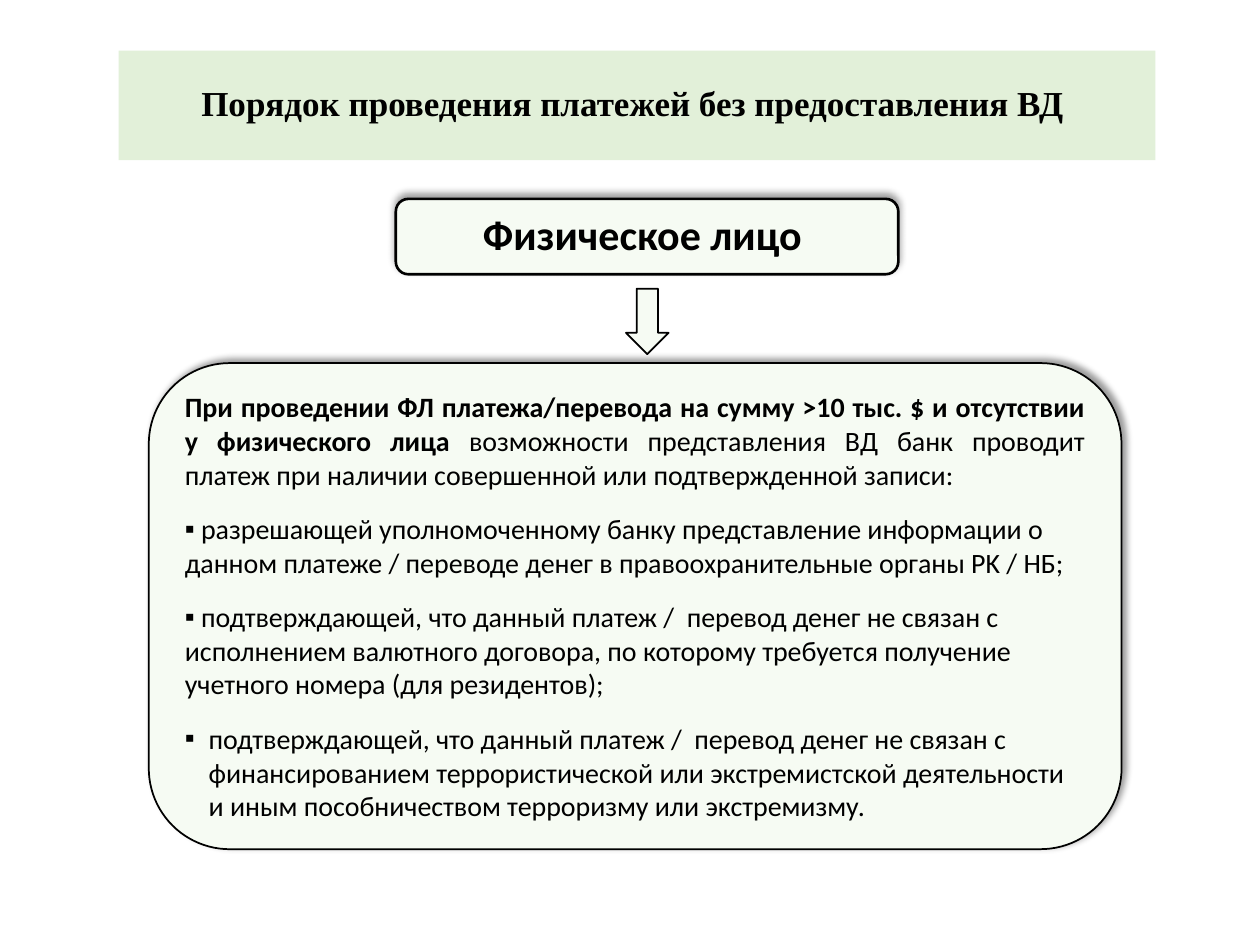
from lxml.etree import SubElement
from pptx import Presentation
from pptx.dml.color import RGBColor
from pptx.enum.shapes import MSO_SHAPE
from pptx.enum.text import MSO_ANCHOR, MSO_AUTO_SIZE, PP_ALIGN
from pptx.oxml.ns import qn
from pptx.util import Cm, Pt

BULLETS = [
    (" разрешающей уполномоченному банку представление информации о данном платеже / "
     "переводе денег в правоохранительные органы РK / НБ;", 0),
    (" подтверждающей, что данный платеж /  перевод денег не связан с исполнением "
     "валютного договора, по которому требуется получение учетного номера (для резидентов);", 0),
    ("подтверждающей, что данный платеж /  перевод денег не связан с финансированием "
     "террористической или экстремистской деятельности и иным пособничеством терроризму "
     "или экстремизму.", 0.48),
]


def color(value):
    return RGBColor.from_string(value)


def add_span(para, text, size=16, font="Calibri", bold=False, ink="000000"):
    span = para.add_run()
    span.text = text
    span.font.size = Pt(size)
    span.font.name = font
    span.font.bold = bold
    span.font.color.rgb = color(ink)


class SlideBuilder:
    band = "E2F0D9"
    panel = "F6FBF3"
    outline = "000000"

    def __init__(self, deck):
        self.page = deck.slides.add_slide(deck.slide_layouts[5])

    def title(self, text, left, top, width, height):
        box = self.page.shapes.title
        box.left, box.top, box.width, box.height = map(Cm, (left, top, width, height))
        box.fill.solid()
        box.fill.fore_color.rgb = color(self.band)
        frame = box.text_frame
        frame.auto_size = MSO_AUTO_SIZE.NONE
        frame.margin_left = frame.margin_right = frame.margin_top = frame.margin_bottom = 0
        self.heading(box, text, size=20, font="Times New Roman")

    def heading(self, box, text, **style):
        frame = box.text_frame
        frame.word_wrap = False
        frame.vertical_anchor = MSO_ANCHOR.MIDDLE
        para = frame.paragraphs[0]
        para.alignment = PP_ALIGN.CENTER
        para.line_spacing = 0.9
        add_span(para, text, bold=True, **style)

    def shape(self, kind, left, top, width, height, line=1, shadow_angle=None):
        box = self.page.shapes.add_shape(kind, *map(Cm, (left, top, width, height)))
        box.fill.solid()
        box.fill.fore_color.rgb = color(self.panel)
        box.line.color.rgb = color(self.outline)
        box.line.width = Pt(line)
        box.shadow.inherit = False
        if shadow_angle is not None:
            self.shadow(box, shadow_angle)
        return box

    def shadow(self, box, angle):
        effects = box._element.spPr.find(qn("a:effectLst"))
        outer = SubElement(effects, qn("a:outerShdw"), blurRad=str(Pt(4)), dist=str(Pt(3)),
                           dir=str(angle * 60000), algn="ctr", rotWithShape="0")
        tint = SubElement(outer, qn("a:srgbClr"), val=self.outline)
        SubElement(tint, qn("a:alpha"), val="40000")

    def paragraph(self, para, spans, alignment=PP_ALIGN.LEFT, bullet=None, indent=0):
        properties = para._p.get_or_add_pPr()
        if bullet:
            properties.set("marL", str(Cm(indent)))
            properties.set("indent", str(-Cm(indent)))
            SubElement(properties, qn("a:buFont"), typeface="Arial")
            SubElement(properties, qn("a:buChar"), char=bullet)
        para.alignment = alignment
        para.space_after = Pt(12)
        for text, bold in spans:
            add_span(para, text, bold=bold)


def main():
    deck = Presentation()
    deck.slide_width, deck.slide_height = Cm(25.4), Cm(19.05)
    builder = SlideBuilder(deck)
    builder.title("Порядок проведения платежей без предоставления ВД ", 2.39, 1.02, 20.9, 2.21)

    person = builder.shape(MSO_SHAPE.ROUNDED_RECTANGLE, 7.98, 4.01, 10.13, 1.52,
                           line=1.5, shadow_angle=270)
    builder.heading(person, "Физическое лицо ", size=24)

    rules = builder.shape(MSO_SHAPE.ROUNDED_RECTANGLE, 3, 7.32, 19.61, 9.8, shadow_angle=315)
    frame = rules.text_frame
    frame.word_wrap = True
    frame.vertical_anchor = MSO_ANCHOR.MIDDLE
    builder.paragraph(frame.paragraphs[0], [
        ("При проведении ФЛ платежа/перевода на сумму >10 тыс. $ и отсутствии "
         "у физического лица ", True),
        ("возможности представления ВД банк проводит платеж при наличии совершенной "
         "или подтвержденной записи:", False),
    ], alignment=PP_ALIGN.JUSTIFY)
    for text, indent in BULLETS:
        builder.paragraph(frame.add_paragraph(), [(text, False)], bullet="▪", indent=indent)

    builder.shape(MSO_SHAPE.DOWN_ARROW, 12.62, 5.82, 0.86, 1.32)
    deck.save("out.pptx")


if __name__ == "__main__":
    main()
